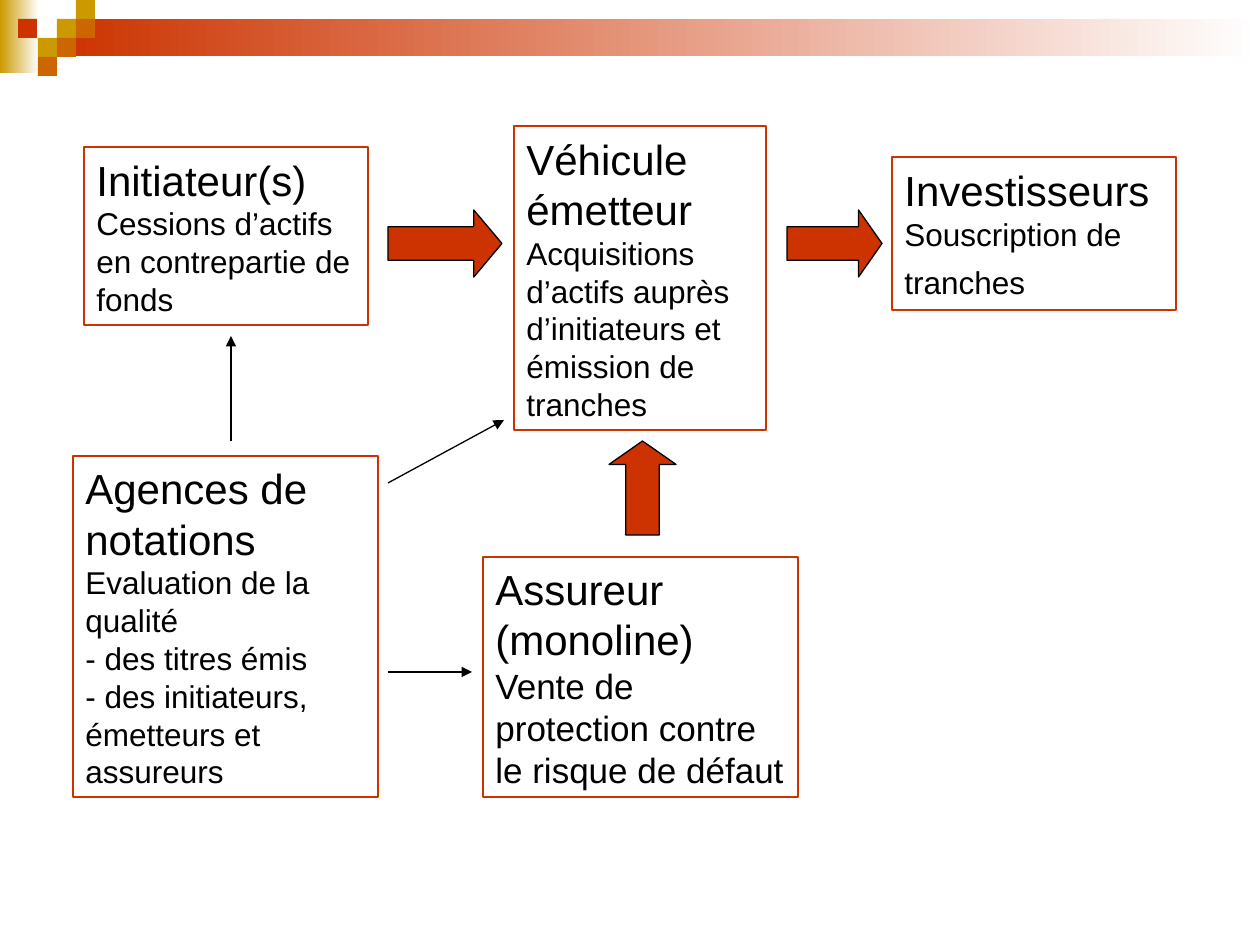
from typing import NamedTuple

from lxml import etree
from pptx import Presentation
from pptx.dml.color import RGBColor
from pptx.enum import shapes, text
from pptx.oxml.ns import qn
from pptx.util import Emu, Pt

SCALE = 914400 / 126
RED, GOLD, ORANGE = "CC3300", "CC9900", "CC6600"
WHITE, BLACK = "FFFFFF", "000000"
SHAPE = shapes.MSO_SHAPE
TILE = 19


class Rect(NamedTuple):
    x: int
    y: int
    w: int
    h: int


class Run(NamedTuple):
    text: str
    size: int = 18


class Actor(NamedTuple):
    rect: Rect
    title: str
    details: list[list[Run]]


class BlockArrow(NamedTuple):
    rect: Rect
    kind: SHAPE
    head: float


class Link(NamedTuple):
    x1: int
    y1: int
    x2: int
    y2: int


GRADIENTS = [(Rect(0, 0, 39, 73), GOLD), (Rect(57, 19, 1203, 37), RED)]

TILES = [
    (57, 19, GOLD), (76, 0, GOLD), (76, 19, ORANGE), (38, 38, GOLD),
    (18, 19, RED), (57, 38, ORANGE), (38, 57, ORANGE),
]

ACTORS = [
    Actor(Rect(84, 147, 284, 178), "Initiateur(s)",
          [[Run("Cessions d’actifs en contrepartie de fonds")]]),
    Actor(Rect(514, 126, 252, 304), "Véhicule émetteur",
          [[Run("Acquisitions d’actifs auprès d’initiateurs et émission de tranches")]]),
    Actor(Rect(892, 157, 284, 153), "Investisseurs",
          [[Run("Souscription de tranches"), Run(" ", 24)]]),
    Actor(Rect(483, 557, 315, 240), "Assureur (monoline)",
          [[Run("Vente de protection contre le risque de défaut", 20)]]),
    Actor(Rect(73, 456, 305, 341), "Agences de notations",
          [[Run("Evaluation de la qualité")],
           [Run("- des titres émis")],
           [Run("- des initiateurs, émetteurs et assureurs")]]),
]

BLOCK_ARROWS = [
    BlockArrow(Rect(388, 210, 114, 67), SHAPE.RIGHT_ARROW, 0.42),
    BlockArrow(Rect(787, 210, 95, 67), SHAPE.RIGHT_ARROW, 0.35),
    BlockArrow(Rect(609, 441, 67, 94), SHAPE.UP_ARROW, 0.35),
]

LINKS = [
    Link(231, 441, 231, 336),
    Link(388, 672, 472, 672),
    Link(388, 483, 504, 420),
]


def px(n: int) -> Emu:
    return Emu(round(n * SCALE))


def color(value: str) -> RGBColor:
    return RGBColor.from_string(value)


def add_shape(s, rect: Rect, fill: str, line: str | None = None, kind=SHAPE.RECTANGLE):
    sp = s.shapes.add_shape(kind, *map(px, rect))
    sp.shadow.inherit = False
    sp.fill.solid()
    sp.fill.fore_color.rgb = color(fill)
    if line:
        sp.line.color.rgb = color(line)
        sp.line.width = Pt(0.75)
    else:
        sp.line.fill.background()
    return sp


def add_gradient(s, rect: Rect, start: str) -> None:
    sp = add_shape(s, rect, start)
    sp.fill.gradient()
    sp.fill.gradient_angle = 0
    for stop, value in zip(sp.fill.gradient_stops, (start, WHITE)):
        stop.color.rgb = color(value)


def add_actor(s, actor: Actor) -> None:
    tf = add_shape(s, actor.rect, WHITE, RED).text_frame
    tf.word_wrap = True
    tf.auto_size = text.MSO_AUTO_SIZE.SHAPE_TO_FIT_TEXT
    tf.vertical_anchor = text.MSO_ANCHOR.MIDDLE
    for i, runs in enumerate([[Run(actor.title, 24)], *actor.details]):
        p = tf.add_paragraph() if i else tf.paragraphs[0]
        p.alignment = text.PP_ALIGN.LEFT
        for run in runs:
            r = p.add_run()
            r.text = run.text
            r.font.name = "Arial"
            r.font.size = Pt(run.size)
            r.font.color.rgb = color(BLACK)


def add_block_arrow(s, arrow: BlockArrow) -> None:
    sp = add_shape(s, arrow.rect, RED, BLACK, arrow.kind)
    sp.adjustments[0] = 0.5
    sp.adjustments[1] = arrow.head


def add_link(s, link: Link) -> None:
    c = s.shapes.add_connector(shapes.MSO_CONNECTOR.STRAIGHT, *map(px, link))
    c.line.color.rgb = color(BLACK)
    c.line.width = Pt(0.75)
    sp_pr = c.line._get_or_add_ln().getparent()
    etree.SubElement(sp_pr.find(qn("a:ln")), qn("a:tailEnd"), type="triangle")
    etree.SubElement(sp_pr, qn("a:effectLst"))


def main() -> None:
    prs = Presentation()
    prs.slide_width, prs.slide_height = px(1260), px(945)
    s = prs.slides.add_slide(prs.slide_layouts[6])
    for rect, start in GRADIENTS:
        add_gradient(s, rect, start)
    for x, y, fill in TILES:
        add_shape(s, Rect(x, y, TILE, TILE), fill)
    for actor in ACTORS:
        add_actor(s, actor)
    for arrow in BLOCK_ARROWS:
        add_block_arrow(s, arrow)
    for link in LINKS:
        add_link(s, link)
    prs.save("out.pptx")


if __name__ == "__main__":
    main()
